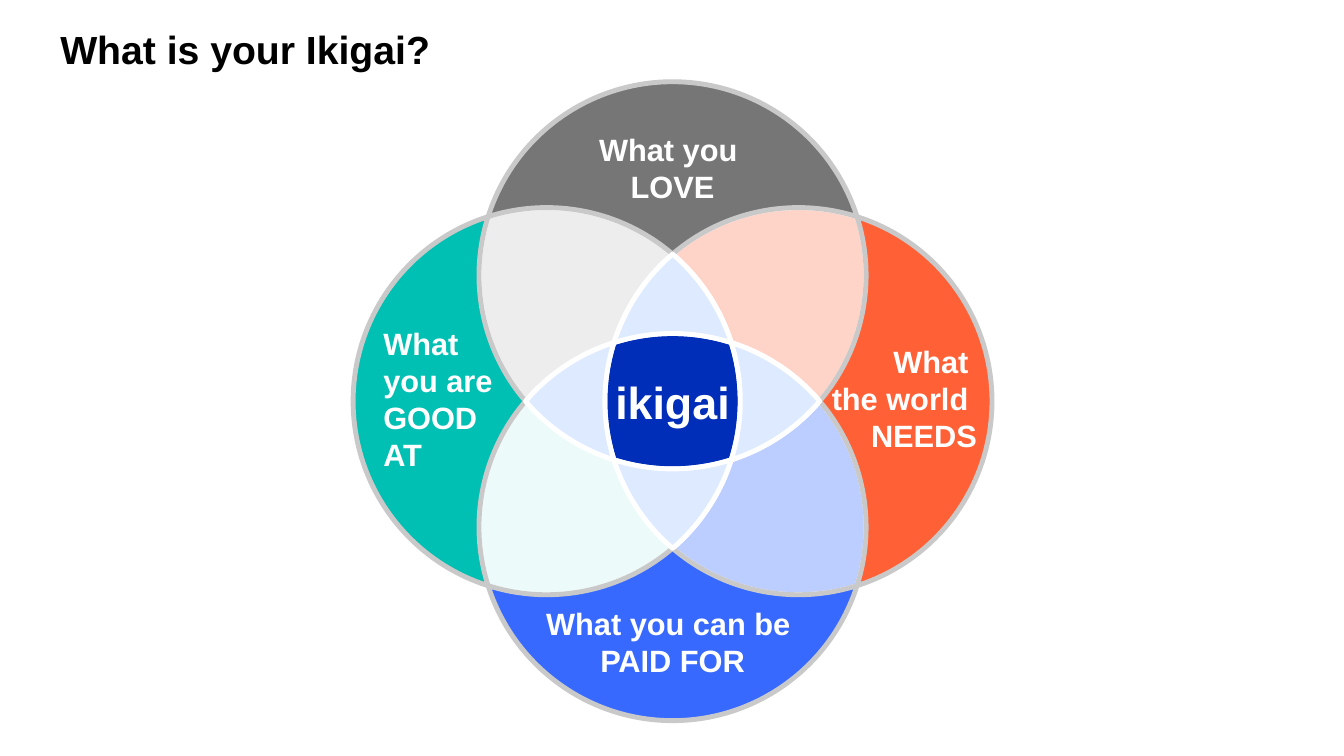
from math import atan2, cos, hypot, pi, remainder, sin, sqrt, tan

from lxml.etree import SubElement
from pptx import Presentation
from pptx.dml.color import RGBColor
from pptx.enum.text import MSO_ANCHOR as Anchor, PP_ALIGN as Align
from pptx.oxml.ns import qn
from pptx.util import Cm, Pt

BLACK = RGBColor(0x00, 0x00, 0x00)
WHITE = RGBColor(0xFF, 0xFF, 0xFF)
OUTLINE = RGBColor(0xC9, 0xC9, 0xC9)
LOVE_GREY = RGBColor(0x76, 0x76, 0x76)
PAID_BLUE = RGBColor(0x37, 0x69, 0xFF)
GOOD_TEAL = RGBColor(0x00, 0xBF, 0xB3)
NEEDS_ORANGE = RGBColor(0xFF, 0x60, 0x35)
CORE_BLUE = RGBColor(0x00, 0x2E, 0xB8)
INNER_BLUE = RGBColor(0xDD, 0xEA, 0xFF)

OVERLAPS = [
    (0, RGBColor(0xD9, 0xD9, 0xD9), 47),
    (3, RGBColor(0xE1, 0xF7, 0xF7), 58),
    (1, RGBColor(0xFF, 0xA0, 0x86), 45),
    (2, RGBColor(0x7D, 0x9D, 0xFF), 51),
]
QUESTIONS = [
    (0, LOVE_GREY, "What you \vLOVE", Align.CENTER, (0.25, 0.13, 0.25, 0.13)),
    (2, PAID_BLUE, "What you can be \vPAID FOR", Align.CENTER, (0.25, 0.5, 0.25, 0.13)),
    (3, GOOD_TEAL, "What \vyou are \vGOOD \vAT", Align.LEFT, (0.76, 0, 0.25, 0.13)),
    (1, NEEDS_ORANGE, "What \vthe world \vNEEDS", Align.RIGHT, (0.25, 0, 0.38, 0.13)),
]
ARC_PARTS = 2


def arc(center, start, end):
    cx, cy = center
    radius = hypot(start[0] - cx, start[1] - cy)
    first = atan2(start[1] - cy, start[0] - cx)
    sweep = remainder(atan2(end[1] - cy, end[0] - cx) - first, 2 * pi) / ARC_PARTS
    pull = 4 / 3 * tan(sweep / 4)

    def point(angle, handle):
        return (cx + radius * (cos(angle) - handle * sin(angle)),
                cy + radius * (sin(angle) + handle * cos(angle)))

    curve = []
    for part in range(ARC_PARTS):
        begin = first + part * sweep
        finish = begin + sweep
        curve += [point(begin, pull), point(finish, -pull), point(finish, 0)]
    return curve


def region(*sides):
    corners = [corner for corner, _ in sides]
    following = corners[1:] + corners[:1]
    return corners[:1] + [point for (corner, center), target in zip(sides, following)
                          for point in arc(center, corner, target)]


def turned(outline, quarters):
    for _ in range(quarters):
        outline = [(-y, x) for x, y in outline]
    return outline


def write(shape, text, size, color, align, insets):
    frame = shape.text_frame
    frame.word_wrap = True
    (frame.margin_left, frame.margin_top,
     frame.margin_right, frame.margin_bottom) = map(Cm, insets)
    frame.text = text
    paragraph = frame.paragraphs[0]
    paragraph.alignment = align
    font = paragraph.font
    font.name, font.size, font.bold = "Arial", Pt(size), True
    font.color.rgb = color


def bend(shape, points):
    sides = list(shape._element.iter(qn("a:lnTo")))
    for index, side in enumerate(sides):
        side.tag = qn("a:cubicBezTo")
        side.remove(side[0])
        for x, y in points[3 * index + 1:3 * index + 4]:
            knot = SubElement(side, qn("a:pt"))
            knot.set("x", str(x - shape.left))
            knot.set("y", str(y - shape.top))


def add_region(slide, middle, outline, fill, line, opacity=100):
    points = [(round(middle[0] + x), round(middle[1] + y)) for x, y in outline]
    builder = slide.shapes.build_freeform(*points[0])
    builder.add_line_segments(points[3::3], close=True)
    shape = builder.convert_to_shape()
    bend(shape, points)
    shape.shadow.inherit = False
    shape.fill.solid()
    shape.fill.fore_color.rgb = fill
    shape.line.color.rgb = line
    shape.line.width = Pt(3.5)
    if opacity < 100:
        color = shape._element.spPr.find(qn("a:solidFill"))[0]
        SubElement(color, qn("a:alpha")).set("val", str(opacity * 1000))
    return shape


def add_ikigai(slide, left, top, size):
    middle = left + size / 2, top + size / 2
    radius = size * 0.303
    offset = size / 2 - radius
    love, needs, paid, good = (0, -offset), (offset, 0), (0, offset), (-offset, 0)

    reach = sqrt(radius ** 2 / 2 - offset ** 2 / 4)
    outer, inner = reach + offset / 2, reach - offset / 2
    cusp = sqrt(radius ** 2 - offset ** 2)
    top_cusp, left_cusp = (0, -cusp), (-cusp, 0)
    far_left, far_right = (-outer, -outer), (outer, -outer)
    near_left, near_right = (-inner, -inner), (inner, -inner)

    overlap = region((far_left, good), (top_cusp, needs), (near_left, paid), (left_cusp, love))
    core = region((near_left, paid), (near_right, good),
                  ((inner, inner), love), ((-inner, inner), needs))
    question = region((far_left, love), (far_right, needs), (top_cusp, good))
    petal = region((top_cusp, good), (near_right, paid), (near_left, needs))

    for quarters, fill, opacity in OVERLAPS:
        add_region(slide, middle, turned(overlap, quarters), fill, WHITE, opacity)
    heart = add_region(slide, middle, core, CORE_BLUE, WHITE)
    write(heart, "ikigai", 32, WHITE, Align.CENTER, (0, 0.13, 0, 0.13))
    heart.text_frame.vertical_anchor = Anchor.MIDDLE
    for quarters, fill, text, align, insets in QUESTIONS:
        crescent = add_region(slide, middle, turned(question, quarters), fill, OUTLINE)
        write(crescent, text, 22, WHITE, align, insets)
        crescent.text_frame.vertical_anchor = Anchor.MIDDLE
    for quarters in range(4):
        add_region(slide, middle, turned(petal, quarters), INNER_BLUE, WHITE)


def add_title(slide, left, top, width, height):
    title = slide.shapes.add_textbox(left, top, width, height)
    write(title, "What is your Ikigai?", 28, BLACK, Align.LEFT, (0.25, 0.13, 0.25, 0.13))


def main():
    deck = Presentation()
    deck.slide_width, deck.slide_height = Cm(33.87), Cm(19.05)
    slide = deck.slides.add_slide(deck.slide_layouts[6])
    add_ikigai(slide, Cm(8.9), Cm(2.06), Cm(16.1))
    add_title(slide, Cm(1.27), Cm(0.51), Cm(24.89), Cm(2.03))
    deck.save("out.pptx")


if __name__ == "__main__":
    main()
